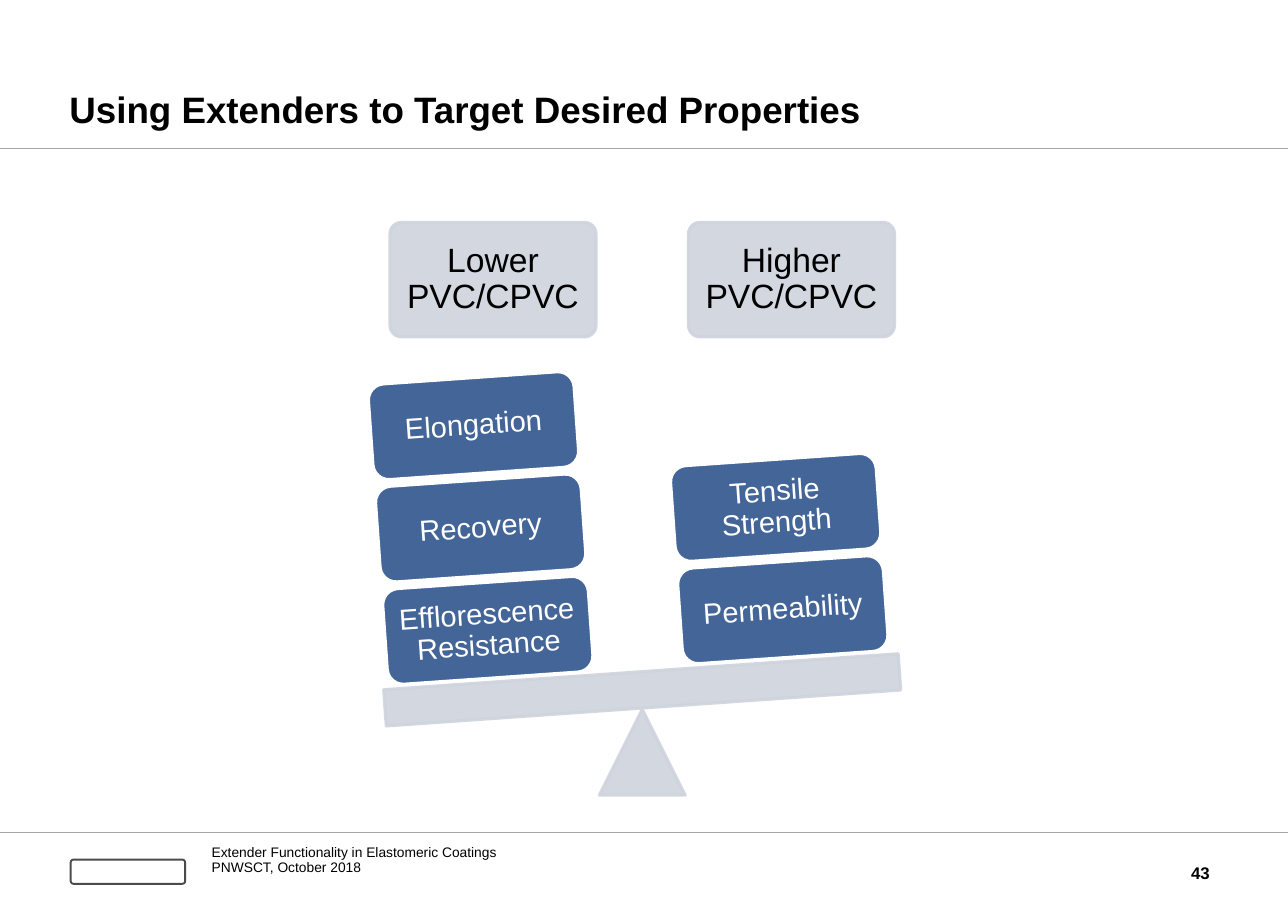
from math import radians, tan

from lxml.etree import SubElement
from pptx import Presentation
from pptx.dml.color import RGBColor
from pptx.enum.shapes import MSO_CONNECTOR, MSO_SHAPE as Preset
from pptx.enum.text import MSO_ANCHOR as Anchor, PP_ALIGN as Align
from pptx.oxml.ns import qn
from pptx.util import Cm, Pt

COLORS = {"ink": "000000", "white": "FFFFFF", "rule": "A6A6A6",
          "scale": "CFD3DD", "weight": "436597", "logo": "4B4B4D"}
FONT = "Arial"
WIDTH, HEIGHT = 29.69, 21.01
TILT = 4  # degrees, left side down
COLUMNS = [  # heading, weights from the beam upwards
    ("Lower PVC/CPVC", ["Efflorescence Resistance", "Recovery", "Elongation"]),
    ("Higher PVC/CPVC", ["Permeability", "Tensile Strength"]),
]


def rgb(name):
    return RGBColor.from_string(COLORS[name])


def write(frame, lines, size, color="ink", bold=False, align=Align.LEFT,
          anchor=Anchor.MIDDLE, inset=0, spacing=None):
    frame.word_wrap = True
    frame.vertical_anchor = anchor
    frame.margin_left = frame.margin_right = Cm(inset)
    frame.margin_top = frame.margin_bottom = Cm(inset)
    frame.text = "\n".join(lines)
    for paragraph in frame.paragraphs:
        paragraph.alignment = align
        paragraph.line_spacing = spacing
        font = paragraph.font
        font.name, font.size, font.bold = FONT, Pt(size), bold
        font.color.rgb = rgb(color)


def add_block(slide, preset, center, size, fill, line, weight=2, opacity=100):
    """Add a preset shape around its center, lengths in cm."""
    (x, y), (w, h) = center, size
    block = slide.shapes.add_shape(preset, Cm(x - w / 2), Cm(y - h / 2), Cm(w), Cm(h))
    block.shadow.inherit = False
    block.fill.solid()
    block.fill.fore_color.rgb = rgb(fill)
    block.line.color.rgb = rgb(line)
    block.line.width = Pt(weight)
    if opacity < 100:
        for color in block._element.spPr.iter(qn("a:srgbClr")):
            SubElement(color, qn("a:alpha"), val=str(opacity * 1000))
    return block


def add_rule(slide, y, weight):
    rule = slide.shapes.add_connector(MSO_CONNECTOR.STRAIGHT, 0, Cm(y), Cm(WIDTH), Cm(y))
    rule.line.color.rgb = rgb("rule")
    rule.line.width = Pt(weight)
    SubElement(rule._element.spPr, qn("a:effectLst"))


def add_header(slide, left, top, width, height):
    title = slide.shapes.title
    title.left, title.top, title.width, title.height = map(Cm, (left, top, width, height))
    write(title.text_frame, ["Using Extenders to Target Desired Properties"], 24,
          bold=True, anchor=Anchor.BOTTOM)
    add_rule(slide, top + height + 0.41, 0.75)


def add_footer(slide, left, top, width, height):
    add_rule(slide, top, 0.5)
    middle = top + height / 2
    logo = add_block(slide, Preset.ROUNDED_RECTANGLE, (left + 1.35, middle + 0.15),
                     (2.64, 0.56), "white", "logo", weight=1.25)
    logo.adjustments[0] = 0.12

    source = slide.shapes.add_textbox(Cm(left + 3.28), Cm(middle - 0.52), Cm(12.47), Cm(0.79))
    write(source.text_frame, ["Extender Functionality in Elastomeric Coatings",
                              "PNWSCT, October 2018"], 9, spacing=Pt(10.4))

    number = slide.shapes.add_textbox(Cm(left + width - 2.26), Cm(middle - 0.42),
                                      Cm(2.26), Cm(1.19))
    write(number.text_frame, ["43"], 11, bold=True, align=Align.RIGHT)


def add_balance(slide, left, top, width, height):
    """Headings on top, weights stacked on a tilted beam over a pivot."""
    center, bottom = left + width / 2, top + height
    beam_y = bottom - 2.43
    lean = tan(radians(TILT))
    pale = {"fill": "scale", "line": "scale", "opacity": 90}

    for side, (heading, _) in zip((-1, 1), COLUMNS):
        head = add_block(slide, Preset.ROUNDED_RECTANGLE,
                         (center + side * 3.44, top + 1.32), (4.75, 2.64), **pale)
        head.adjustments[0] = 0.1
        write(head.text_frame, [heading], 22, align=Align.CENTER, inset=0.23, spacing=0.9)

    add_block(slide, Preset.ISOSCELES_TRIANGLE, (center, bottom - 0.99), (1.98, 1.98), **pale)
    beam = add_block(slide, Preset.RECTANGLE, (center, beam_y), (width, 0.84), **pale)
    beam.rotation = -TILT

    for side, (_, labels) in zip((-1, 1), COLUMNS):
        along = side * 3.4
        for level, label in enumerate(labels):
            rise = level * 2.36
            x = center - 0.16 + along - rise * lean
            y = beam_y - 1.61 - along * lean - rise
            weight = add_block(slide, Preset.ROUNDED_RECTANGLE, (x, y), (4.75, 2.21),
                               "weight", "white")
            weight.rotation = -TILT
            write(weight.text_frame, [label], 19, "white", align=Align.CENTER,
                  inset=0.2, spacing=0.9)


def main():
    deck = Presentation()
    deck.slide_width, deck.slide_height = Cm(WIDTH), Cm(HEIGHT)
    slide = deck.slides.add_slide(deck.slide_layouts.get_by_name("Title Only"))
    add_header(slide, 1.6, 0.81, 26.09, 2.21)
    add_balance(slide, 8.86, 5.13, 11.89, 13.21)
    add_footer(slide, 1.6, 19.2, 26.29, 1.51)
    deck.save("out.pptx")


if __name__ == "__main__":
    main()
